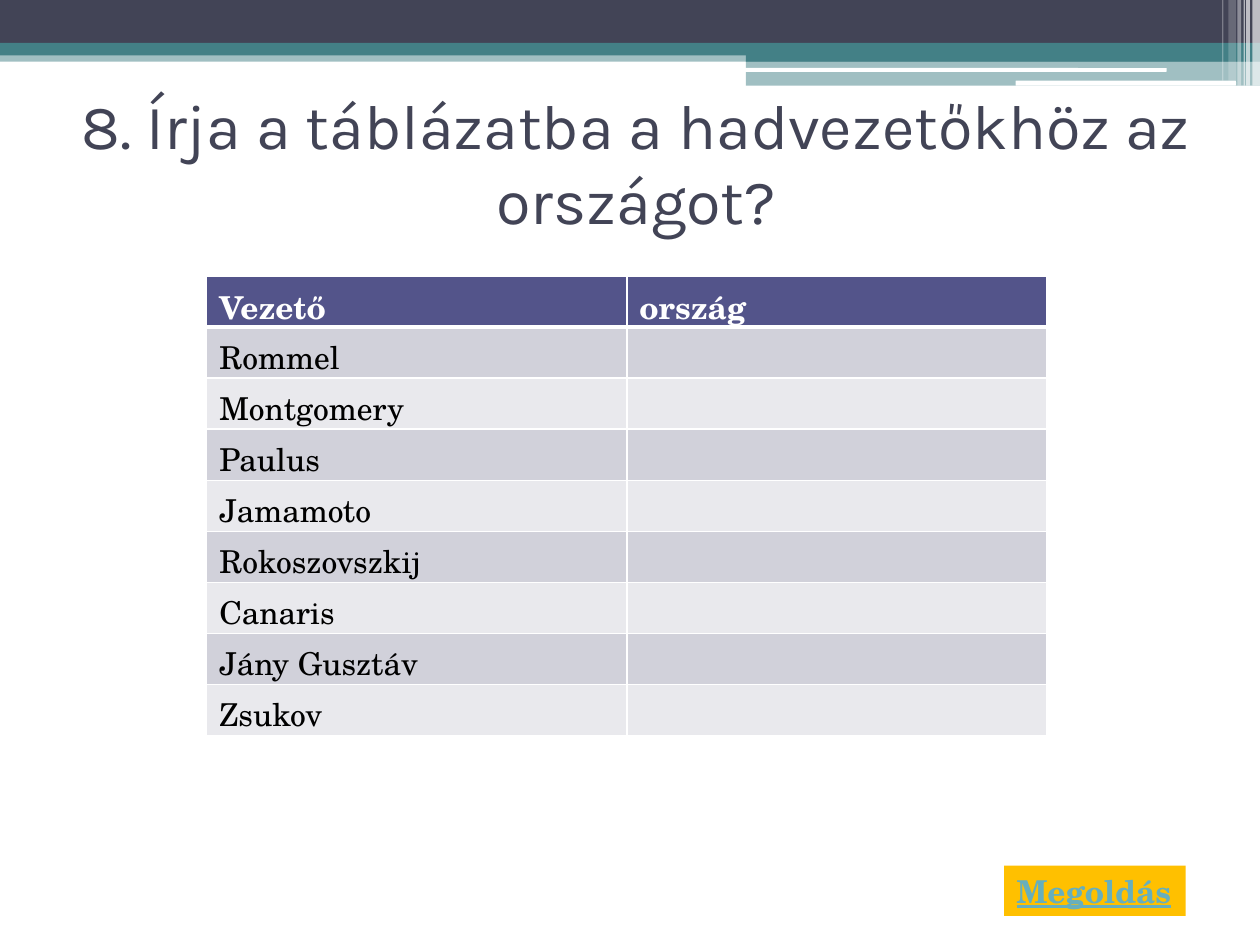
from lxml.etree import SubElement
from pptx import Presentation
from pptx.dml.color import RGBColor
from pptx.enum.shapes import MSO_SHAPE
from pptx.enum.text import MSO_ANCHOR, MSO_AUTO_SIZE, PP_ALIGN
from pptx.oxml import parse_xml
from pptx.oxml.ns import nsdecls, qn
from pptx.util import Inches, Pt

COLORS = {
    "white": "FFFFFF", "black": "000000", "dark": "424456", "teal": "438086",
    "header": "53548A", "odd_row": "D1D1DA", "even_row": "E9E9ED",
    "button": "FFC000", "link": "67AFBD",
}
HEADING_FONT = "Karla"
BODY_FONT = "TeX Gyre Schola"
BANDS = [
    (0, 0.4, 10, 0.09, "teal", 50),
    (0, 0, 10, 0.34, "dark", 100),
    (0, 0.34, 10, 0.1, "teal", 100),
    (5.92, 0.39, 4.08, 0.1, "teal", 100),
    (5.92, 0.48, 4.08, 0.2, "teal", 50),
]
ROUNDED_LINES = [(5.91, 0.54, 3.35, 0.03), (8.06, 0.64, 1.75, 0.04)]
STRIPES = [
    (9.94, 0.06, 0.68, 65), (9.89, 0.03, 0.68, 65), (9.87, 0.01, 0.68, 60),
    (9.82, 0.03, 0.68, 40), (9.75, 0.06, 0.64, 20), (9.7, 0.01, 0.64, 30),
]
HEADERS = ["Vezető", "ország"]
LEADERS = ["Rommel", "Montgomery", "Paulus", "Jamamoto", "Rokoszovszkij",
           "Canaris", "Jány Gusztáv", "Zsukov"]


def color(name):
    """Return the named colour."""
    return RGBColor.from_string(COLORS[name])


def write_text(frame, text, color_name, **formats):
    """Write one formatted run into a text frame."""
    run = frame.paragraphs[0].add_run()
    run.text = text
    run.font.color.rgb = color(color_name)
    for name, value in formats.items():
        setattr(run.font, name, value)
    return run


def line_xml(tag, width):
    """Return a white line element of the given width in points."""
    return parse_xml(
        f'<a:{tag} {nsdecls("a")} w="{Pt(width)}"><a:solidFill>'
        f'<a:srgbClr val="{COLORS["white"]}"/></a:solidFill></a:{tag}>')


def add_block(slide, box, color_name, opacity=100, kind=MSO_SHAPE.RECTANGLE):
    """Add a plain filled shape without outline."""
    shape = slide.shapes.add_shape(kind, *map(Inches, box))
    shape.shadow.inherit = False
    shape.line.fill.background()
    shape.fill.solid()
    shape.fill.fore_color.rgb = color(color_name)
    if opacity < 100:
        fill = shape.fill.fore_color._xFill[0]
        SubElement(fill, qn("a:alpha"), val=str(opacity * 1000))
    return shape


def add_decoration(slide):
    """Add the bands, thin lines and stripes along the top edge."""
    for *box, name, opacity in BANDS:
        add_block(slide, box, name, opacity)
    for box in ROUNDED_LINES:
        add_block(slide, box, "white", kind=MSO_SHAPE.ROUNDED_RECTANGLE)
    for left, width, height, opacity in STRIPES:
        add_block(slide, (left, 0, width, height), "white", opacity)


def format_title(slide, text):
    """Place and fill the title placeholder."""
    title = slide.shapes.title
    title.left, title.top, title.width, title.height = map(Inches, (0.55, 0.7, 9, 1.17))
    frame = title.text_frame
    formats = {"auto_size": MSO_AUTO_SIZE.NONE, "vertical_anchor": MSO_ANCHOR.MIDDLE,
               "margin_left": Inches(0.05), "margin_right": Inches(0.05)}
    for name, value in formats.items():
        setattr(frame, name, value)
    frame.paragraphs[0].alignment = PP_ALIGN.CENTER
    write_text(frame, text, "dark", name=HEADING_FONT, size=Pt(36))


def set_borders(cell, bottom_width, top_width):
    """Draw white borders around a table cell."""
    widths = {"lnL": 1, "lnR": 1, "lnT": top_width, "lnB": bottom_width}
    properties = cell._tc.get_or_add_tcPr()
    for index, (tag, width) in enumerate(widths.items()):
        properties.insert(index, line_xml(tag, width))


def add_leader_table(slide):
    """Add the table of leaders with an empty country column."""
    rows = [HEADERS] + [[leader, ""] for leader in LEADERS]
    box = map(Inches, (1.64, 2.19, 6.67, 3.65))
    table = slide.shapes.add_table(len(rows), len(HEADERS), *box).table
    for row_index, row in enumerate(rows):
        is_header = row_index == 0
        fill_name = "header" if is_header else ("even_row", "odd_row")[row_index % 2]
        for column_index, text in enumerate(row):
            cell = table.cell(row_index, column_index)
            cell.fill.solid()
            cell.fill.fore_color.rgb = color(fill_name)
            set_borders(cell, 3 if is_header else 1, 3 if row_index == 1 else 1)
            if text:
                write_text(cell.text_frame, text, "white" if is_header else "black",
                           name=BODY_FONT, size=Pt(18), bold=is_header)


def add_button(slide, text):
    """Add the solution button."""
    button = add_block(slide, (7.97, 6.87, 1.44, 0.4), "button")
    frame = button.text_frame
    formats = {"word_wrap": False, "auto_size": MSO_AUTO_SIZE.SHAPE_TO_FIT_TEXT,
               "vertical_anchor": MSO_ANCHOR.TOP}
    for name, value in formats.items():
        setattr(frame, name, value)
    frame.paragraphs[0].alignment = PP_ALIGN.LEFT
    run = write_text(frame, text, "link", name=BODY_FONT, size=Pt(18),
                     bold=True, underline=True)
    run.font._element.insert(0, line_xml("ln", 1.4))


def main():
    """Build and save the slide."""
    presentation = Presentation()
    presentation.slide_width = Inches(10)
    presentation.slide_height = Inches(7.5)
    slide = presentation.slides.add_slide(presentation.slide_layouts[5])
    add_decoration(slide)
    format_title(slide, "8. Írja a táblázatba a hadvezetőkhöz az országot?")
    add_button(slide, "Megoldás")
    add_leader_table(slide)
    presentation.save("out.pptx")


if __name__ == "__main__":
    main()
